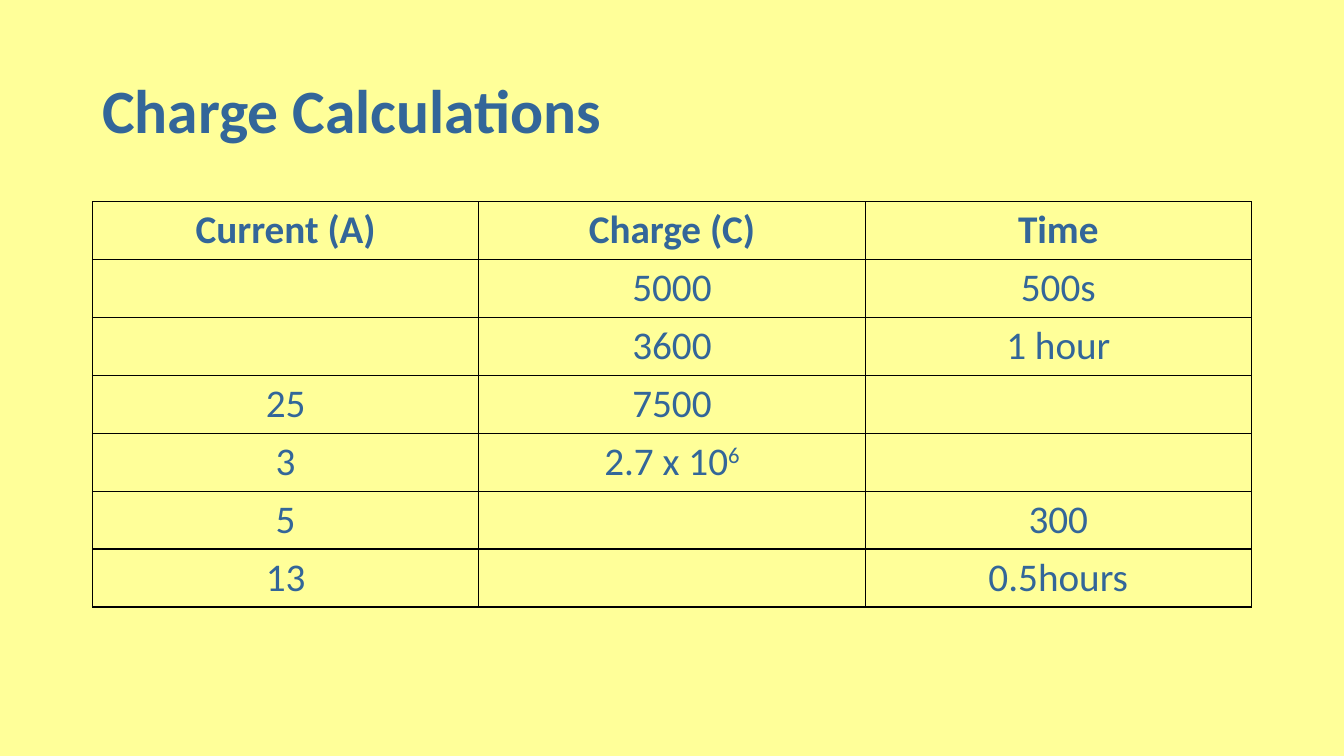
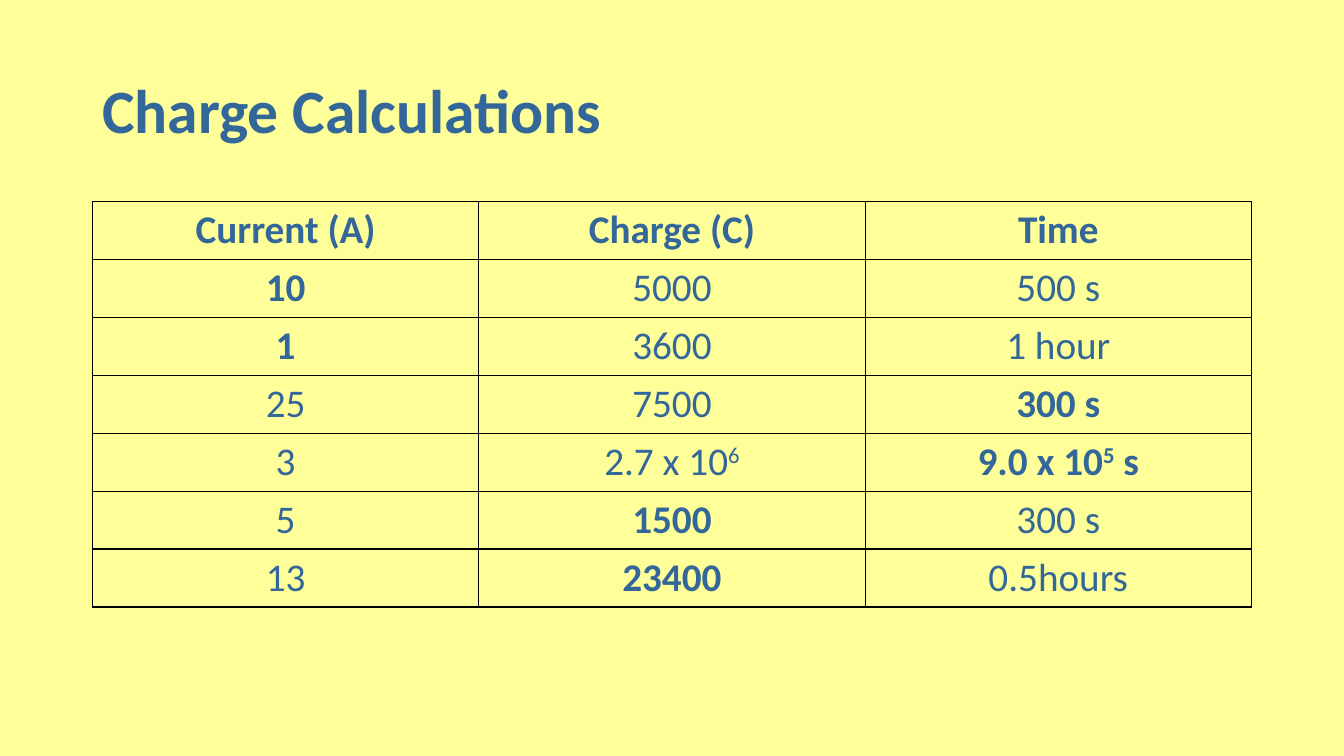
from pptx import Presentation
from pptx.dml.color import RGBColor
from pptx.enum import text
from pptx.oxml import parse_xml
from pptx.oxml.ns import nsdecls
from pptx.util import Cm, Pt

PAPER, INK, GRID = "FFFF99", "336699", "000000"
TITLE = "Charge Calculations"
HEADER = ["*Current (A)", "*Charge (C)", "*Time"]
LEFT, WIDTH, ROW_HEIGHT = 2.33, 29.21, 1.46

# A leading * makes a cell bold; text between ^ signs is raised.
QUESTIONS = [
    HEADER,
    ["", "5000", "500s"],
    ["", "3600", "1 hour"],
    ["25", "7500", ""],
    ["3", "2.7 x 10^6^", ""],
    ["5", "", "300"],
    ["13", "", "0.5hours"],
]
ANSWERS = [
    HEADER,
    ["*10", "5000", "500 s"],
    ["*1", "3600", "1 hour"],
    ["25", "7500", "*300 s"],
    ["3", "2.7 x 10^6^", "*9.0 x 10^5^ s"],
    ["5", "*1500", "300 s"],
    ["13", "*23400", "0.5hours"],
]


def paint(color, value):
    """Set a colour format from a hex string."""
    color.rgb = RGBColor.from_string(value)


def write(para, marked, size):
    """Fill a paragraph from marked text: leading * is bold, ^...^ is raised."""
    style = {"name": "Calibri", "size": Pt(size), "bold": marked.startswith("*")}
    for index, piece in enumerate(marked.lstrip("*").split("^")):
        if not piece:
            continue
        span = para.add_run()
        span.text = piece
        for name, value in style.items():
            setattr(span.font, name, value)
        paint(span.font.color, INK)
        if index % 2:
            span.font._element.set("baseline", "30000")


deck = Presentation()
deck.slide_width, deck.slide_height = Cm(33.87), Cm(19.05)
background = deck.slide_master.background.fill
background.solid()
paint(background.fore_color, PAPER)

for rows in (QUESTIONS, ANSWERS):
    page = deck.slides.add_slide(deck.slide_layouts[6])

    title = page.shapes.add_textbox(Cm(LEFT), Cm(1.01), Cm(WIDTH), Cm(3.68)).text_frame
    title.word_wrap = True
    title.vertical_anchor = text.MSO_ANCHOR.MIDDLE
    title.paragraphs[0].line_spacing = 0.9
    write(title.paragraphs[0], "*" + TITLE, 44)

    table = page.shapes.add_table(
        len(rows), len(HEADER), Cm(LEFT), Cm(5.08), Cm(WIDTH), Cm(ROW_HEIGHT * len(rows))
    ).table
    table.first_row = table.horz_banding = False
    for cell, marked in zip(table.iter_cells(), sum(rows, [])):
        for side in "LRTB":
            cell._tc.get_or_add_tcPr().append(parse_xml(
                f'<a:ln{side} {nsdecls("a")} w="12700"><a:solidFill>'
                f'<a:srgbClr val="{GRID}"/></a:solidFill></a:ln{side}>'
            ))
        cell.fill.background()
        para = cell.text_frame.paragraphs[0]
        para.alignment = text.PP_ALIGN.CENTER
        write(para, marked, 28)

deck.save("out.pptx")
